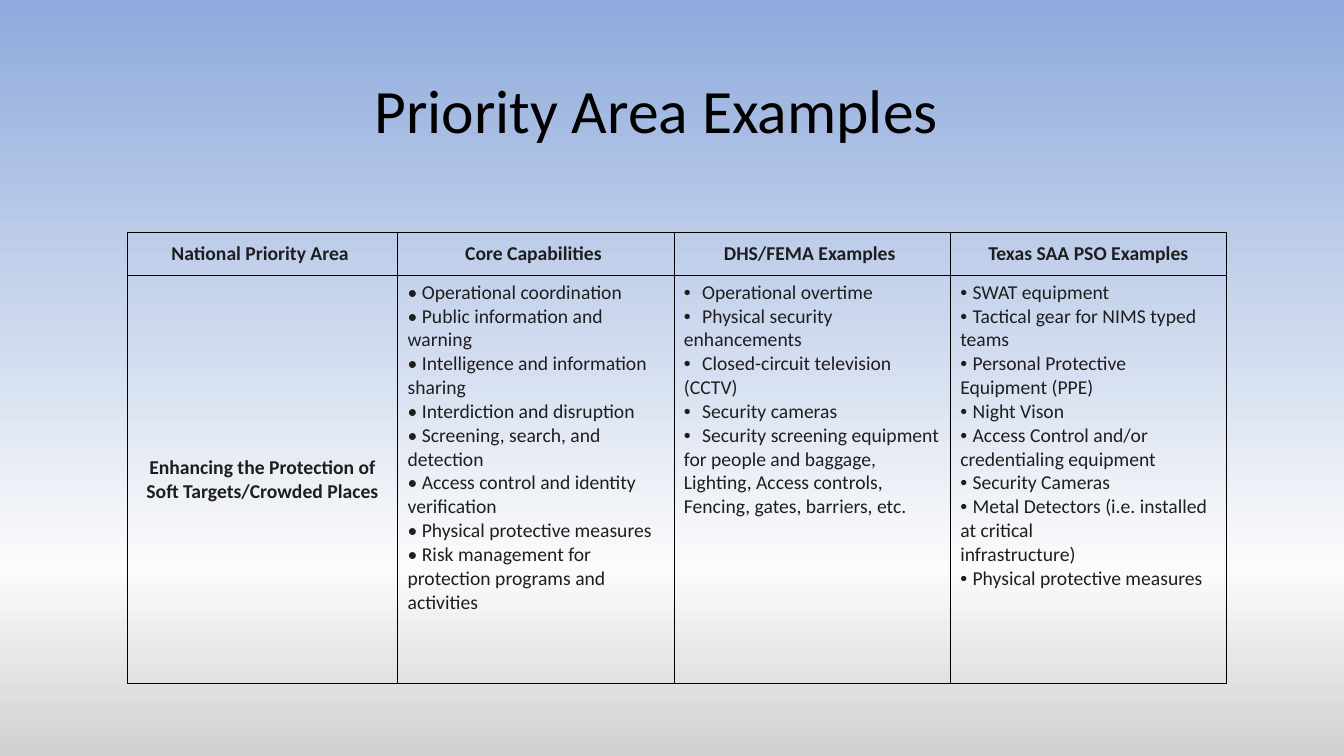
from lxml.etree import SubElement
from pptx import Presentation
from pptx.dml.color import RGBColor
from pptx.enum.text import MSO_ANCHOR as Anchor, PP_ALIGN as Align
from pptx.oxml import parse_xml
from pptx.oxml.ns import nsdecls, qn
from pptx.util import Pt

COLORS = {"sky": "8FAADC", "mist": "FBFBFB", "ground": "D1D1D1",
          "title": "000000", "text": "1E1E1E", "border": "000000"}
BACKGROUND_STOPS = [(0, "sky"), (75, "mist"), (100, "ground")]

TITLE_FONT = {"name": "Calibri", "size": Pt(44), "bold": False}
HEAD_FONT = {"name": "Calibri", "size": Pt(14), "bold": True}
ITEM_FONT = {**HEAD_FONT, "bold": False}
BULLET_FONT = {**ITEM_FONT, "name": "Arial"}

COLUMN_WIDTHS = [193, 197.4, 197.4, 197.4]
ROW_HEIGHTS = [31, 291.6]
HEADINGS = ["National Priority Area ", "Core Capabilities ",
            "DHS/FEMA Examples ", "Texas SAA PSO Examples"]
PRIORITY_AREA = "Enhancing the Protection of\vSoft Targets/Crowded Places"
CORE_CAPABILITIES = [
    "Operational coordination",
    "Public information and warning",
    "Intelligence and information sharing",
    "Interdiction and disruption",
    "Screening, search, and detection",
    "Access control and identity verification",
    "Physical protective measures",
    "Risk management for protection programs and activities",
]
FEDERAL_EXAMPLES = [
    "Operational overtime",
    "Physical security enhancements",
    "Closed-circuit television (CCTV)",
    "Security cameras",
    "Security screening equipment for people and baggage, Lighting, "
    "Access controls, Fencing, gates, barriers, etc.",
]
STATE_EXAMPLES = [
    "SWAT equipment",
    "Tactical gear for NIMS typed teams",
    "Personal Protective Equipment (PPE)",
    "Night Vison",
    "Access Control and/or credentialing equipment",
    "Security Cameras",
    "Metal Detectors (i.e. installed at critical\vinfrastructure)",
    "Physical protective measures",
]


def set_values(target, values):
    for name, value in values.items():
        setattr(target, name, value)


def add_text(paragraph, text, font, color="text"):
    """Add formatted text; a vertical tab starts a new line."""
    for number, line in enumerate(text.split("\v")):
        if number:
            paragraph.add_line_break()
        run = paragraph.add_run()
        run.text = line
        set_values(run.font, font)
        run.font.color.rgb = RGBColor.from_string(COLORS[color])


def paint_background(slide):
    stops = "".join(
        f'<a:gs pos="{percent * 1000}"><a:srgbClr val="{COLORS[color]}"/></a:gs>'
        for percent, color in BACKGROUND_STOPS)
    fill = slide.background.fill
    fill.gradient()
    fill.gradient_angle = 270
    gradient = slide.element.find(".//" + qn("a:gradFill"))
    gradient.replace(gradient.find(qn("a:gsLst")),
                     parse_xml(f'<a:gsLst {nsdecls("a")}>{stops}</a:gsLst>'))


def add_title(slide, text):
    title = slide.shapes.title
    set_values(title, {"left": Pt(126), "top": Pt(28.8),
                       "width": Pt(686), "height": Pt(104.4)})
    title.text_frame.vertical_anchor = Anchor.MIDDLE
    heading = title.text_frame.paragraphs[0]
    set_values(heading, {"alignment": Align.CENTER, "line_spacing": 0.9})
    add_text(heading, text, TITLE_FONT, "title")


def format_cell(cell):
    properties = cell._tc.get_or_add_tcPr()
    for side in ("lnL", "lnR", "lnT", "lnB"):
        border = SubElement(properties, qn(f"a:{side}"), w=str(Pt(0.5)))
        solid = SubElement(border, qn("a:solidFill"))
        SubElement(solid, qn("a:srgbClr"), val=COLORS["border"])
    cell.fill.background()


def write_heading(cell, text):
    cell.vertical_anchor = Anchor.MIDDLE
    paragraph = cell.text_frame.paragraphs[0]
    paragraph.alignment = Align.CENTER
    add_text(paragraph, text, HEAD_FONT)


def write_list(cell, items, bullet, bullet_font, tab=None):
    """Write items whose wrapped lines return to the cell's left edge."""
    for number, item in enumerate(items):
        frame = cell.text_frame
        paragraph = frame.add_paragraph() if number else frame.paragraphs[0]
        if tab:
            tabs = SubElement(paragraph._p.get_or_add_pPr(), qn("a:tabLst"))
            SubElement(tabs, qn("a:tab"), pos=str(Pt(tab)), algn="l")
        add_text(paragraph, bullet, bullet_font)
        add_text(paragraph, item, ITEM_FONT)


def add_priority_table(slide):
    table = slide.shapes.add_table(
        len(ROW_HEIGHTS), len(COLUMN_WIDTHS), Pt(91), Pt(165.8),
        Pt(sum(COLUMN_WIDTHS)), Pt(sum(ROW_HEIGHTS))).table
    set_values(table, {"first_row": False, "horz_banding": False})
    for column, width in zip(table.columns, COLUMN_WIDTHS):
        column.width = Pt(width)
    for row, height in zip(table.rows, ROW_HEIGHTS):
        row.height = Pt(height)
    for cell in table.iter_cells():
        format_cell(cell)

    # Header row and priority area
    for index, heading in enumerate(HEADINGS):
        write_heading(table.cell(0, index), heading)
    write_heading(table.cell(1, 0), PRIORITY_AREA)

    # Lists
    write_list(table.cell(1, 1), CORE_CAPABILITIES, "• ", ITEM_FONT)
    write_list(table.cell(1, 2), FEDERAL_EXAMPLES, "•\t", BULLET_FONT, tab=13)
    write_list(table.cell(1, 3), STATE_EXAMPLES, "• ", BULLET_FONT)


def main():
    deck = Presentation()
    set_values(deck, {"slide_width": Pt(960), "slide_height": Pt(540)})
    slide = deck.slides.add_slide(deck.slide_layouts[5])
    paint_background(slide)
    add_title(slide, "Priority Area Examples")
    add_priority_table(slide)
    deck.save("out.pptx")


if __name__ == "__main__":
    main()
